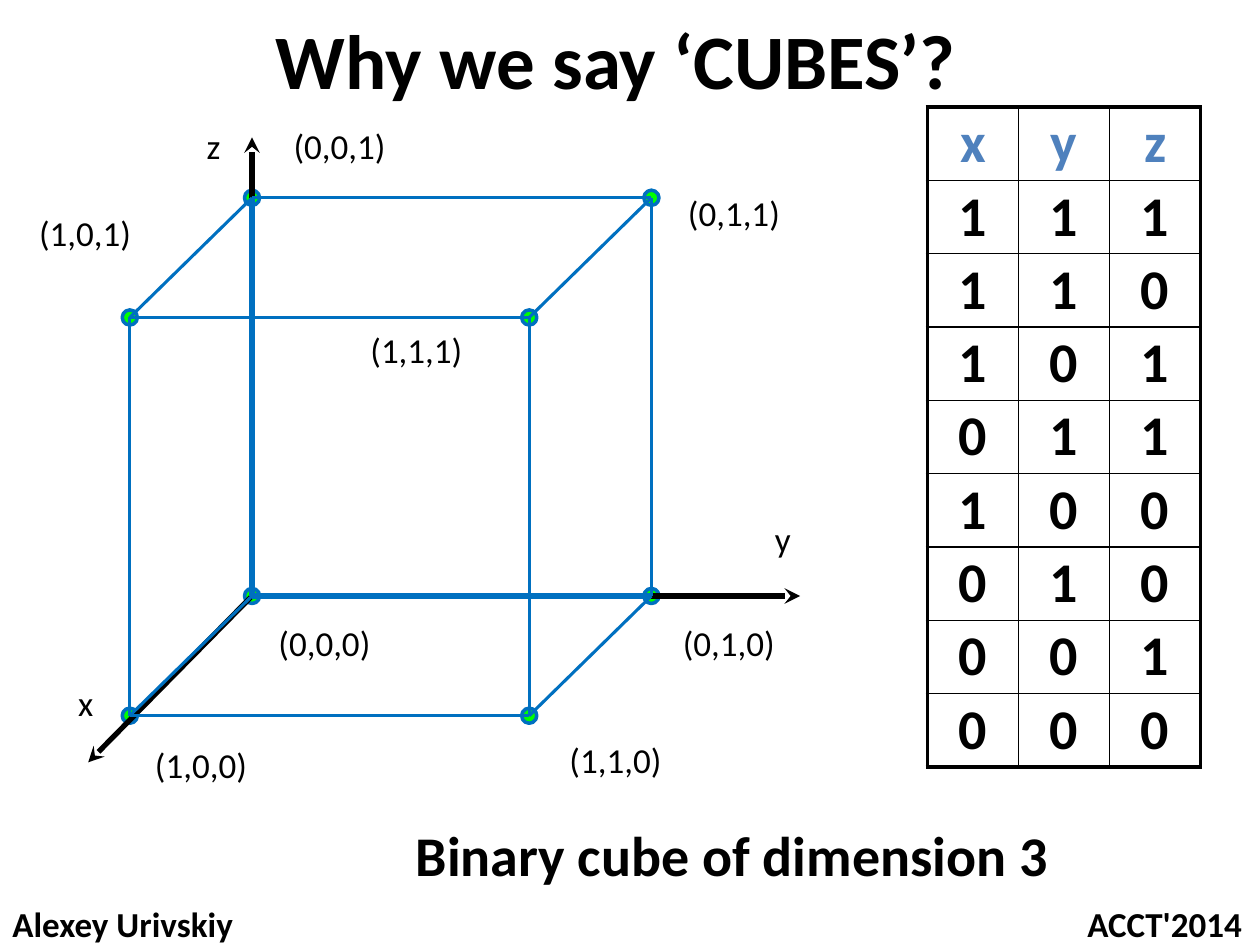
"""Build a slide that shows the binary cube of dimension 3 beside its table of vertices."""
from itertools import combinations

from lxml.etree import SubElement
from pptx import Presentation
from pptx.dml.color import RGBColor
from pptx.enum.shapes import MSO_CONNECTOR, MSO_SHAPE
from pptx.enum.text import MSO_ANCHOR, PP_ALIGN
from pptx.oxml.ns import qn
from pptx.util import Inches, Pt

BLACK = RGBColor(0x00, 0x00, 0x00)
BLUE = RGBColor(0x00, 0x70, 0xC0)
GREEN = RGBColor(0x00, 0xFF, 0x00)
HEADER_BLUE = RGBColor(0x4F, 0x81, 0xBD)

TITLE = "Why we say ‘CUBES’?"
CAPTION = "Binary cube of dimension 3"
FOOTER = "Alexey Urivskiy\tACCT'2014"
FOOTER_TAB = 9.76

TABLE_ROWS = ["xyz", "111", "110", "101", "011", "100", "010", "001", "000"]
TABLE_AREA = (7.36, 0.85, 2.17, 5.24)

ORIGIN = (2, 4.73)
STEPS = [(-0.97, 0.95), (3.17, 0), (0, -3.16)]
DOT_SIZE = 0.12
LABEL_SIZE = (1.14, 0.44)
AXIS_LABEL_SIZE = (0.2, 0.44)
VERTEX_LABELS = {
    (1, 1, 1): (2.9, 2.56),
    (0, 1, 1): (5.42, 1.47),
    (0, 0, 1): (2.29, 0.94),
    (1, 0, 1): (0.27, 1.63),
    (0, 1, 0): (5.38, 4.88),
    (0, 0, 0): (2.17, 4.88),
    (1, 1, 0): (4.48, 5.81),
    (1, 0, 0): (1.19, 5.85),
}
AXES = [
    ("y", (6.35, 4.73), (6.11, 4.06)),
    ("x", (0.7, 6.05), (0.58, 5.36)),
    ("z", (2, 1.09), (1.6, 0.94)),
]
THICK_EDGES = [{(0, 0, 0), (0, 1, 0)}, {(0, 0, 0), (0, 0, 1)}]


def project(vertex):
    return tuple(
        start + sum(bit * step[side] for bit, step in zip(vertex, STEPS))
        for side, start in enumerate(ORIGIN)
    )


def write(frame, text, size, bold=False, color=BLACK, align=PP_ALIGN.LEFT):
    para = frame.paragraphs[0]
    para.alignment = align
    span = para.add_run()
    span.text = text
    for name, value in {"name": "Calibri", "size": Pt(size), "bold": bold}.items():
        setattr(span.font, name, value)
    span.font.color.rgb = color
    return para


def add_text(page, area, text, size, inset=0.1, anchor=MSO_ANCHOR.TOP, **style):
    frame = page.shapes.add_textbox(*map(Inches, area)).text_frame
    layout = {
        "word_wrap": True,
        "vertical_anchor": anchor,
        "margin_left": Inches(inset),
        "margin_right": Inches(inset),
    }
    for name, value in layout.items():
        setattr(frame, name, value)
    return write(frame, text, size, **style)


def add_line(page, start, end, color, width, arrow=False):
    line = page.shapes.add_connector(MSO_CONNECTOR.STRAIGHT, *map(Inches, start + end))
    line.line.color.rgb = color
    line.line.width = Pt(width)
    if arrow:
        SubElement(line.line._get_or_add_ln(), qn("a:tailEnd"), type="stealth")
    SubElement(line._element.spPr, qn("a:effectLst"))


def add_dot(page, center):
    corner = [Inches(place - DOT_SIZE / 2) for place in center]
    dot = page.shapes.add_shape(MSO_SHAPE.OVAL, *corner, Inches(DOT_SIZE), Inches(DOT_SIZE))
    dot.shadow.inherit = False
    dot.fill.solid()
    dot.fill.fore_color.rgb = GREEN
    dot.line.color.rgb = BLUE
    dot.line.width = Pt(2)


def set_borders(cell, outer_sides):
    properties = cell._tc.get_or_add_tcPr()
    for index, (side, outer) in enumerate(outer_sides.items()):
        border = properties.makeelement(qn(f"a:{side}"), {"w": str(Pt(2.25 if outer else 1))})
        fill = SubElement(border, qn("a:solidFill"))
        SubElement(fill, qn("a:srgbClr"), val=str(BLACK))
        properties.insert(index, border)


def add_vertex_table(page):
    row_count, column_count = len(TABLE_ROWS), len(TABLE_ROWS[0])
    shape = page.shapes.add_table(row_count, column_count, *map(Inches, TABLE_AREA))
    table = shape.table
    table.first_row = table.horz_banding = False
    for row, values in enumerate(TABLE_ROWS):
        for column, value in enumerate(values):
            cell = table.cell(row, column)
            cell.fill.background()
            cell.margin_left = cell.margin_right = Inches(0.04)
            color = BLACK if row else HEADER_BLUE
            para = write(cell.text_frame, value, 32, True, color, PP_ALIGN.CENTER)
            para.line_spacing = 0.9
            set_borders(cell, {
                "lnL": column == 0,
                "lnR": column == column_count - 1,
                "lnT": row == 0,
                "lnB": row == row_count - 1,
            })


def add_cube(page):
    for vertex in VERTEX_LABELS:
        add_dot(page, project(vertex))
    for name, tip, place in AXES:
        add_line(page, ORIGIN, tip, BLACK, 3, arrow=True)
        add_text(page, place + AXIS_LABEL_SIZE, name, 20, inset=0.04)
    for vertex, place in VERTEX_LABELS.items():
        label = f"({','.join(map(str, vertex))})"
        add_text(page, place + LABEL_SIZE, label, 20, inset=0.04)
    for first, second in combinations(VERTEX_LABELS, 2):
        if sum(a != b for a, b in zip(first, second)) == 1:
            width = 3 if {first, second} in THICK_EDGES else 1.75
            add_line(page, project(first), project(second), BLUE, width)


def main():
    deck = Presentation()
    deck.slide_width, deck.slide_height = Inches(10), Inches(7.5)
    page = deck.slides.add_slide(deck.slide_layouts[6])
    add_text(page, (1.05, 0.05, 7.68, 0.84), TITLE, 44, bold=True, align=PP_ALIGN.CENTER)
    add_vertex_table(page)
    add_cube(page)
    add_text(page, (0.82, 6.46, 7.6, 0.64), CAPTION, 32, bold=True, align=PP_ALIGN.RIGHT)
    footer = add_text(page, (0, 7.13, 10, 0.4), FOOTER, 20, anchor=MSO_ANCHOR.MIDDLE, bold=True)
    tabs = SubElement(footer._p.get_or_add_pPr(), qn("a:tabLst"))
    SubElement(tabs, qn("a:tab"), pos=str(Inches(FOOTER_TAB)), algn="r")
    deck.save("out.pptx")


if __name__ == "__main__":
    main()
